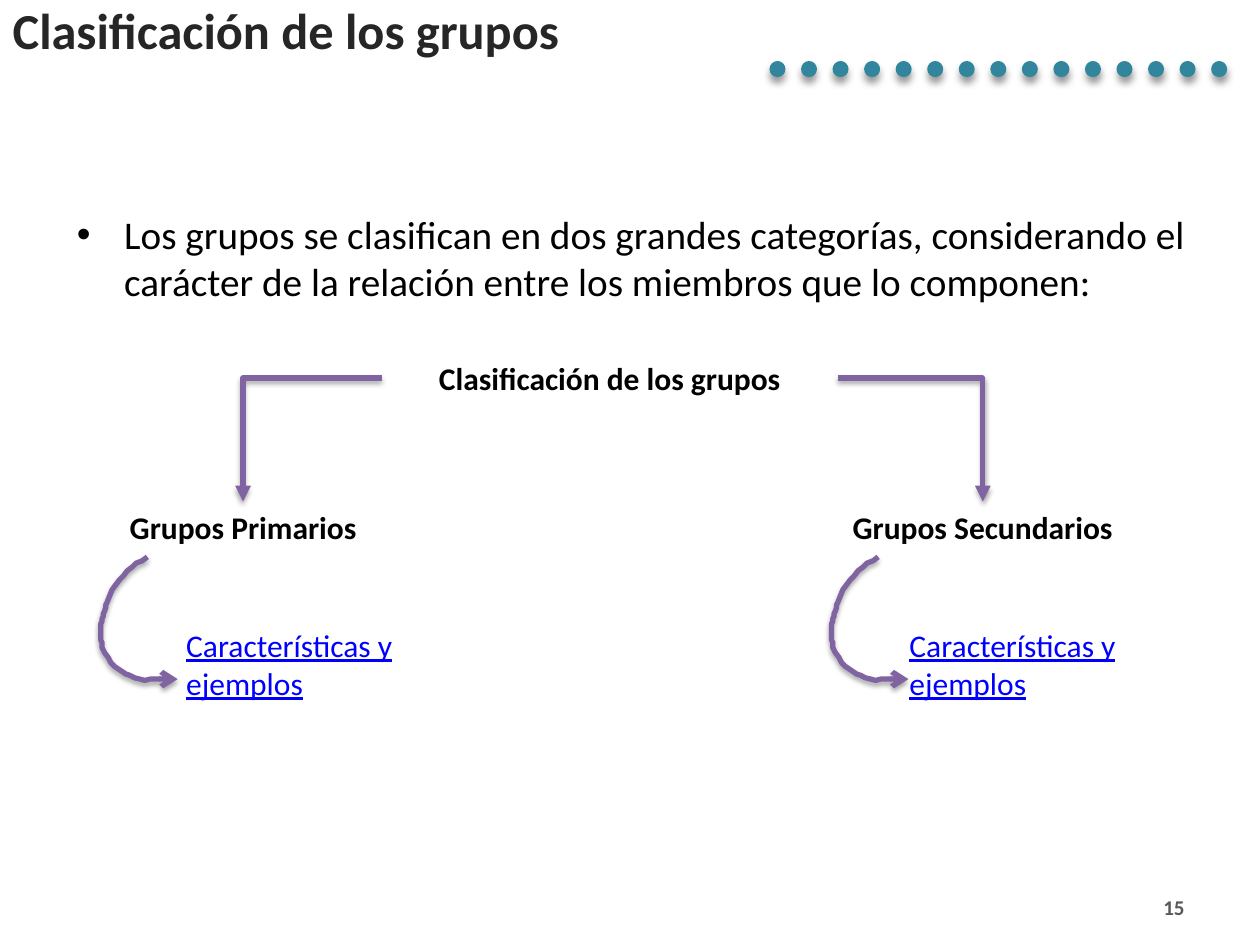
from lxml import etree
from pptx import Presentation
from pptx import util as u
from pptx.dml.color import RGBColor
from pptx.enum import dml, shapes, text
from pptx.oxml.ns import qn

SCALE = 9144  # EMU per px, 100 px to the inch
COLORS = {
    "title": "262626",
    "body": "000000",
    "number": "595959",
    "link": "0000FF",
    "arrow": "8064A2",
    "dots": "31859C",
    "shadow": "000000",
}


def px(length):
    return u.Emu(round(length * SCALE))


def curve_points(start, segments, steps=10):
    """Points along a chain of cubic Bézier segments."""
    points = [start]
    for first, second, end in segments:
        for step in range(1, steps + 1):
            t = step / steps
            weights = ((1 - t) ** 3, 3 * t * (1 - t) ** 2, 3 * t * t * (1 - t), t ** 3)
            corners = (start, first, second, end)
            points.append(tuple(sum(w * corner[axis] for w, corner in zip(weights, corners))
                                for axis in (0, 1)))
        start = end
    return points


class SlideBuilder:
    font = "Calibri"

    def __init__(self, slide):
        self.slide = slide

    def color(self, name):
        return RGBColor.from_string(COLORS[name])

    def style_text(self, shape, words, size, color, bold=False, underline=False,
                   align=text.PP_ALIGN.LEFT, anchor=text.MSO_ANCHOR.TOP):
        frame = shape.text_frame
        frame.text = words
        frame.word_wrap = True
        frame.auto_size = text.MSO_AUTO_SIZE.NONE
        frame.vertical_anchor = anchor
        paragraph = frame.paragraphs[0]
        paragraph.alignment = align
        font = paragraph.runs[0].font
        font.name, font.size = self.font, u.Pt(size)
        font.bold, font.underline = bold, underline
        font.color.rgb = self.color(color)

    def placeholder(self, index, box, words, size, color, **style):
        shape = self.slide.placeholders[index]
        shape.left, shape.top, shape.width, shape.height = map(px, box)
        self.style_text(shape, words, size, color, **style)

    def label(self, box, words, size=18, color="body", **style):
        shape = self.slide.shapes.add_textbox(*map(px, box))
        self.style_text(shape, words, size, color, **style)

    def stroke(self, shape, color, width, tail=None):
        shape.line.color.rgb = self.color(color)
        shape.line.width = u.Pt(width)
        if tail:
            line = shape.line._get_or_add_ln()
            etree.SubElement(line, qn("a:tailEnd"), type=tail)

    def shadow(self, shape, blur, distance, opacity):
        """Soft shadow straight below; lengths in points, opacity in percent."""
        effects = etree.SubElement(shape._element.spPr, qn("a:effectLst"))
        outer = etree.SubElement(effects, qn("a:outerShdw"), blurRad=str(u.Pt(blur)),
                                 dist=str(u.Pt(distance)), dir="5400000", rotWithShape="0")
        tint = etree.SubElement(outer, qn("a:srgbClr"), val=COLORS["shadow"])
        etree.SubElement(tint, qn("a:alpha"), val=str(opacity * 1000))

    def dotted_line(self, start, end):
        line = self.slide.shapes.add_connector(
            shapes.MSO_CONNECTOR.STRAIGHT, *map(px, start + end))
        self.stroke(line, "dots", 9)
        line.line.dash_style = dml.MSO_LINE.ROUND_DOT
        line.line._get_or_add_ln().set("cap", "rnd")
        self.shadow(line, 4, 3, 40)

    def elbow_arrow(self, start, end):
        """Arrow that runs sideways, then down."""
        arrow = self.slide.shapes.add_connector(
            shapes.MSO_CONNECTOR.ELBOW, *map(px, start + end))
        arrow._element.spPr.find(qn("a:prstGeom")).set("prst", "bentConnector2")
        self.stroke(arrow, "arrow", 3, "triangle")
        self.shadow(arrow, 3.1, 1.8, 35)

    def curved_arrow(self, points):
        builder = self.slide.shapes.build_freeform(*points[0], scale=SCALE)
        builder.add_line_segments(points[1:], close=False)
        arrow = builder.convert_to_shape()
        arrow.fill.background()
        self.stroke(arrow, "arrow", 3, "arrow")
        self.shadow(arrow, 3.1, 1.8, 35)


def main():
    presentation = Presentation()
    presentation.slide_width, presentation.slide_height = px(1000), px(750)
    slide = presentation.slides.add_slide(presentation.slide_layouts[1])
    builder = SlideBuilder(slide)
    center = text.PP_ALIGN.CENTER

    builder.dotted_line((617, 55), (992, 55))
    builder.placeholder(0, (0, 0, 900, 47), "Clasificación de los grupos", 28.8, "title",
                        bold=True, anchor=text.MSO_ANCHOR.MIDDLE)
    builder.placeholder(1, (51, 162, 906, 95),
                        "Los grupos se clasifican en dos grandes categorías, considerando el "
                        "carácter de la relación entre los miembros que lo componen:",
                        22.4, "body")
    builder.label((717, 695, 233, 40), "15", 12, "number", bold=True,
                  align=text.PP_ALIGN.RIGHT, anchor=text.MSO_ANCHOR.BOTTOM)
    builder.label((303, 280, 362, 40), "Clasificación de los grupos", bold=True, align=center)

    curve = curve_points((117, 442), [
        ((102, 451), (91, 460), (85, 478)),
        ((83, 484), (80, 496), (80, 496)),
        ((81, 504), (79, 512), (83, 518)),
        ((92, 533), (100, 536), (115, 540)),
        ((130, 538), (122, 539), (141, 539)),
    ])
    # name, left and width of the label, branch start, left of the link, shift of the curve
    branches = [
        ("Grupos Primarios", 67, 252, 303, 138, 0),
        ("Grupos Secundarios", 642, 276, 665, 712, 580),
    ]
    for name, left, width, branch, link_left, shift in branches:
        builder.label((left, 398, width, 40), name, bold=True, align=center)
        builder.elbow_arrow((branch, 300), (left + width / 2, 398))
        builder.label((link_left, 492, 236, 70), "Características y ejemplos",
                      color="link", underline=True)
        builder.curved_arrow([(x + shift, y) for x, y in curve])

    presentation.save("out.pptx")


if __name__ == "__main__":
    main()
